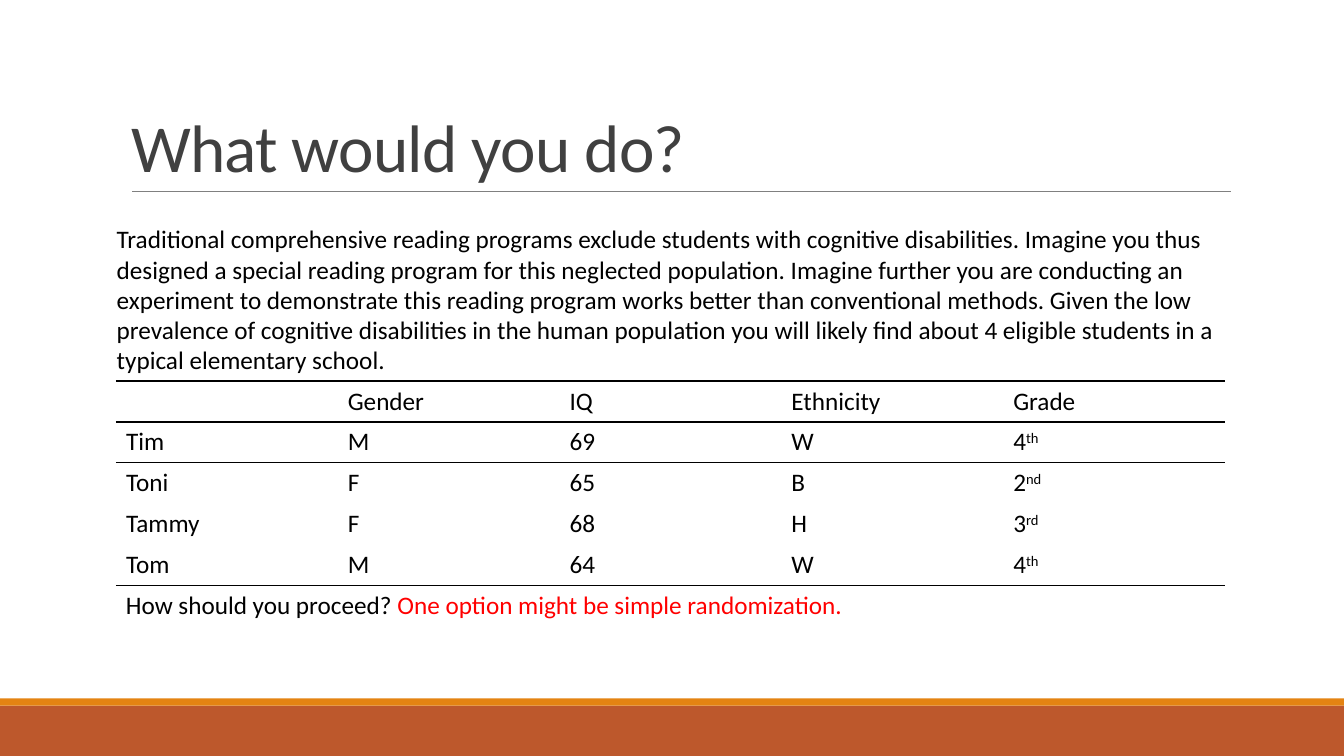
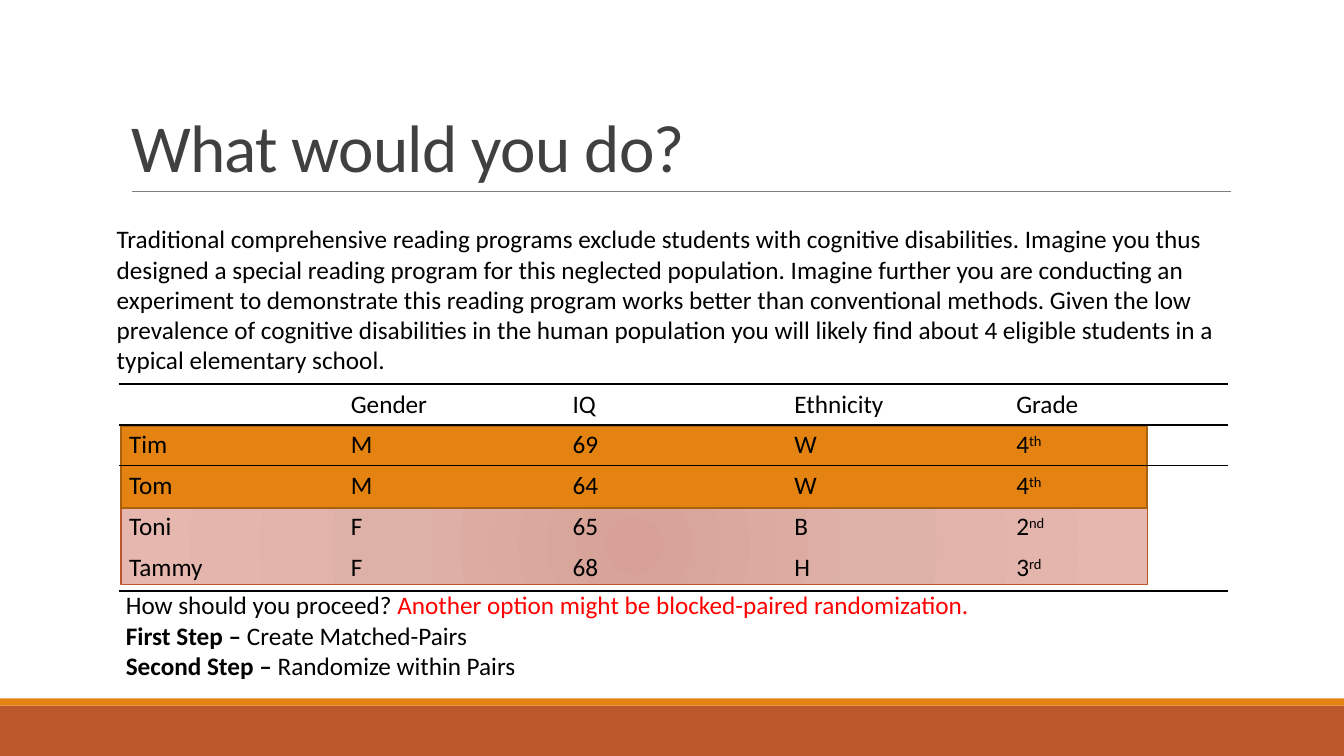
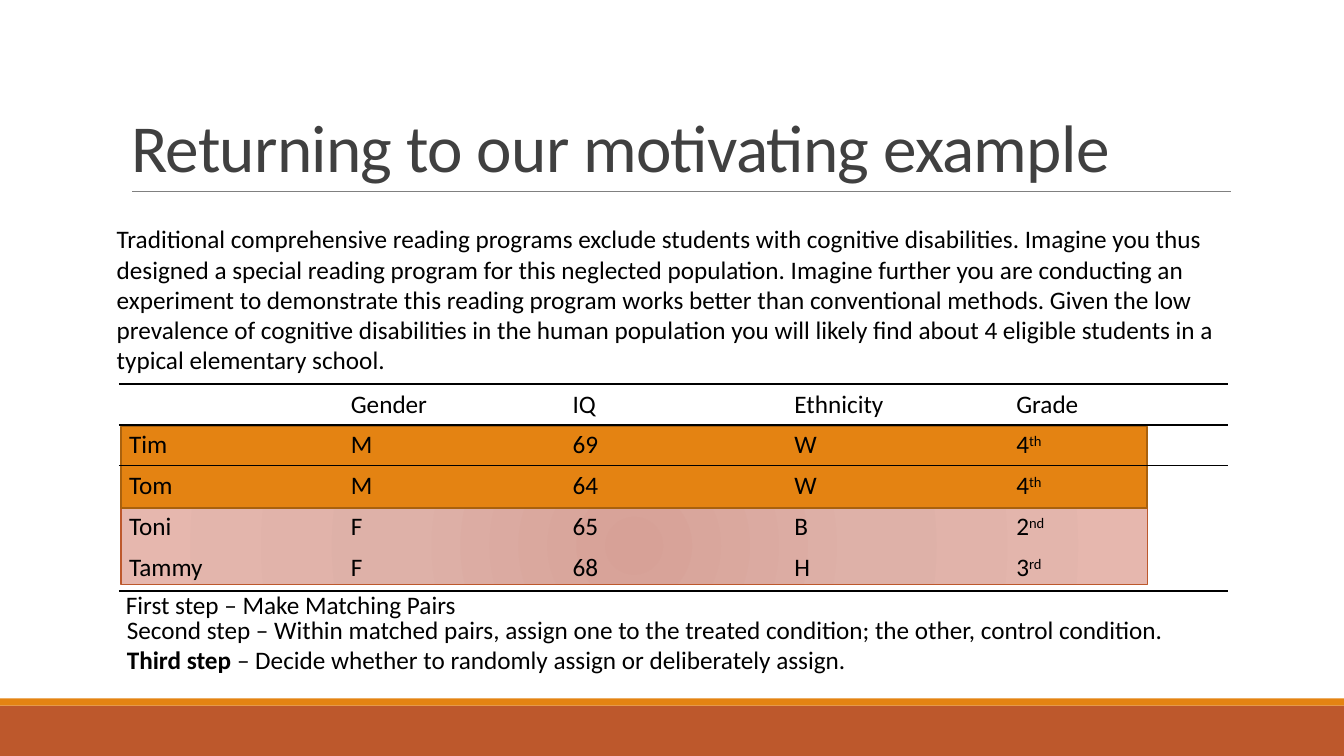
from lxml.etree import SubElement
from pptx import Presentation
from pptx.dml.color import RGBColor
from pptx.enum.shapes import MSO_CONNECTOR, MSO_SHAPE
from pptx.enum.text import MSO_ANCHOR, MSO_AUTO_SIZE, PP_ALIGN
from pptx.oxml.ns import qn
from pptx.util import Inches, Pt

FONT = "Calibri"
COLORS = {
    "ink": "000000", "title": "404040", "rule": "808080", "red": "FF0000",
    "rust": "BD582C", "orange": "E48312", "brown": "A9610D",
    "rose": "D7A197", "blush": "DEB1A8", "pale": "E6B7AE",
}
INTRO = (
    "Traditional comprehensive reading programs exclude students with cognitive "
    "disabilities. Imagine you thus designed a special reading program for this "
    "neglected population. Imagine further you are conducting an experiment to "
    "demonstrate this reading program works better than conventional methods. "
    "Given the low prevalence of cognitive disabilities in the human population "
    "you will likely find about 4 eligible students in a typical elementary school."
)
HEAD = ["", "Gender", "IQ", "Ethnicity", "Grade"]
PUPILS = {
    "Tim": ["M", "69", "W", "4th"],
    "Toni": ["F", "65", "B", "2nd"],
    "Tammy": ["F", "68", "H", "3rd"],
    "Tom": ["M", "64", "W", "4th"],
}
ENROLLED = ["Tim", "Toni", "Tammy", "Tom"]
PAIRED = ["Tim", "Tom", "Toni", "Tammy"]
RULED = {0, 1, 2, 5}
ROW = 2.03 / 5


def rgb(name):
    """Look up a palette colour."""
    return RGBColor.from_string(COLORS[name])


def style(run, size=18, color="ink", bold=False):
    """Format one run."""
    font = run.font
    font.name, font.size, font.bold = FONT, Pt(size), bold
    font.color.rgb = rgb(color)


def add_rect(slide, box, fill=None, line=None, width=1):
    """Add a rectangle with a plain fill and an optional outline."""
    rect = slide.shapes.add_shape(MSO_SHAPE.RECTANGLE, *map(Inches, box))
    rect.shadow.inherit = False
    if fill:
        rect.fill.solid()
        rect.fill.fore_color.rgb = rgb(fill)
    if line:
        rect.line.color.rgb = rgb(line)
        rect.line.width = Pt(width)
    else:
        rect.line.fill.background()
    return rect


def add_glow(rect, stops):
    """Fill a rectangle with a circular gradient."""
    props = rect.element.spPr
    grad = SubElement(props, qn("a:gradFill"), rotWithShape="1")
    items = SubElement(grad, qn("a:gsLst"))
    for place, name in stops:
        stop = SubElement(items, qn("a:gs"), pos=str(place * 1000))
        SubElement(stop, qn("a:srgbClr"), val=COLORS[name])
    ring = SubElement(grad, qn("a:path"), path="circle")
    SubElement(ring, qn("a:fillToRect"), {side: "100000" for side in "ltrb"})
    props.find(qn("a:prstGeom")).addnext(grad)


def add_rule(slide, left, right, top):
    """Add the thin line below the title."""
    ends = map(Inches, (left, top, right, top))
    rule = slide.shapes.add_connector(MSO_CONNECTOR.STRAIGHT, *ends)
    rule.line.color.rgb = rgb("rule")
    rule.line.width = Pt(0.5)
    SubElement(rule.element.spPr, qn("a:effectLst"))
    return rule


def set_frame(slide, layout):
    """Move the shared bands and rule to the layout."""
    parts = [
        add_rect(slide, (0, 7, 13.33, 0.5), "rust"),
        add_rect(slide, (0, 6.93, 13.33, 0.07), "orange"),
        add_rule(slide, 1.31, 12.21, 1.9),
    ]
    for part in parts:
        layout.shapes.element.append(part.element)


def set_title(slide, text):
    """Place and format the title."""
    title = slide.shapes.title
    title.left, title.top, title.width, title.height = map(Inches, (1.2, 0.31, 11, 1.59))
    frame = title.text_frame
    frame.text = text
    frame.auto_size = MSO_AUTO_SIZE.NONE
    frame.vertical_anchor = MSO_ANCHOR.BOTTOM
    para = frame.paragraphs[0]
    para.alignment = PP_ALIGN.LEFT
    para.line_spacing = 0.85
    run = para.runs[0]
    style(run, 48, "title")
    run._r.get_or_add_rPr().set("spc", "-50")


def add_text(slide, box, *lines):
    """Add a text box whose lines are lists of text and format."""
    frame = slide.shapes.add_textbox(*map(Inches, box)).text_frame
    frame.word_wrap = True
    for index, line in enumerate(lines):
        para = frame.add_paragraph() if index else frame.paragraphs[0]
        for text, look in line:
            run = para.add_run()
            run.text = text
            style(run, **look)


def set_edge(cell, tag, shown):
    """Draw or clear one border of a cell."""
    edge = SubElement(cell._tc.get_or_add_tcPr(), qn(tag), w=str(Pt(1)))
    if shown:
        fill = SubElement(edge, qn("a:solidFill"))
        SubElement(fill, qn("a:srgbClr"), val=COLORS["ink"])
    else:
        SubElement(edge, qn("a:noFill"))


def set_cell(cell, text, row, grade):
    """Write a cell, raising the ending of a grade."""
    para = cell.text_frame.paragraphs[0]
    para.text = text[:-2] if grade else text
    if grade:
        end = para.add_run()
        end.text = text[-2:]
        end._r.get_or_add_rPr().set("baseline", "30000")
    para.font.size = Pt(18)
    for run in para.runs:
        style(run)
    for tag, shown in (("a:lnL", False), ("a:lnR", False),
                       ("a:lnT", row in RULED), ("a:lnB", row + 1 in RULED)):
        set_edge(cell, tag, shown)
    cell.fill.background()


def add_roster(slide, left, top, names, last=ROW):
    """Add the table of pupils in the given order."""
    rows = [HEAD] + [[name] + PUPILS[name] for name in names]
    box = map(Inches, (left, top, 11, ROW * 4 + last))
    table = slide.shapes.add_table(len(rows), len(HEAD), *box).table
    table.first_row = table.horz_banding = False
    for col in table.columns:
        col.width = Inches(2.2)
    for index, row in enumerate(rows):
        table.rows[index].height = Inches(last if index == 4 else ROW)
        for spot, text in enumerate(row):
            set_cell(table.cell(index, spot), text, index, index > 0 and spot == 4)


def add_pairs(slide):
    """Add the paired table over its two coloured blocks."""
    glow = add_rect(slide, (1.2, 5.03, 10.18, 0.77), line="rust")
    add_glow(glow, [(0, "rose"), (45, "blush"), (100, "pale")])
    add_rect(slide, (1.2, 4.23, 10.18, 0.81), "orange", "brown", 1.25)
    add_roster(slide, 1.18, 3.81, PAIRED, 0.43)


def add_page(deck, layout, title):
    """Add a slide with its title and the opening text."""
    slide = deck.slides.add_slide(layout)
    set_title(slide, title)
    add_text(slide, (1.06, 2.17, 11.14, 1.62), [(INTRO, {})])
    return slide


def main():
    """Build the three slides."""
    deck = Presentation()
    deck.slide_width, deck.slide_height = Inches(13.33), Inches(7.5)
    layout = deck.slide_layouts.get_by_name("Title Only")
    plain, bold, red = {}, {"bold": True}, {"color": "red"}
    ask = ("How should you proceed? ", plain)

    simple = add_page(deck, layout, "What would you do?")
    set_frame(simple, layout)
    add_roster(simple, 1.15, 3.78, ENROLLED)
    add_text(simple, (1.15, 5.8, 8.05, 0.4),
             [ask, ("One option might be simple randomization.", red)])

    block = add_page(deck, layout, "What would you do?")
    add_pairs(block)
    add_text(block, (1.15, 5.8, 8.76, 1.01),
             [ask, ("Another option might be blocked-paired randomization.", red)],
             [("First Step – ", bold), ("Create Matched-Pairs", plain)],
             [("Second Step – ", bold), ("Randomize within Pairs", plain)])

    steps = add_page(deck, layout, "Returning to our motivating example")
    add_pairs(steps)
    add_text(steps, (1.16, 6.04, 11, 0.71),
             [("Second step – Within matched pairs, assign one to the treated "
               "condition; the other, control condition.", plain)],
             [("Third step ", bold),
              ("– Decide whether to randomly assign or deliberately assign.", plain)])
    add_text(steps, (1.15, 5.8, 3.8, 0.4), [("First step – Make Matching Pairs", plain)])

    deck.save("out.pptx")


if __name__ == "__main__":
    main()
